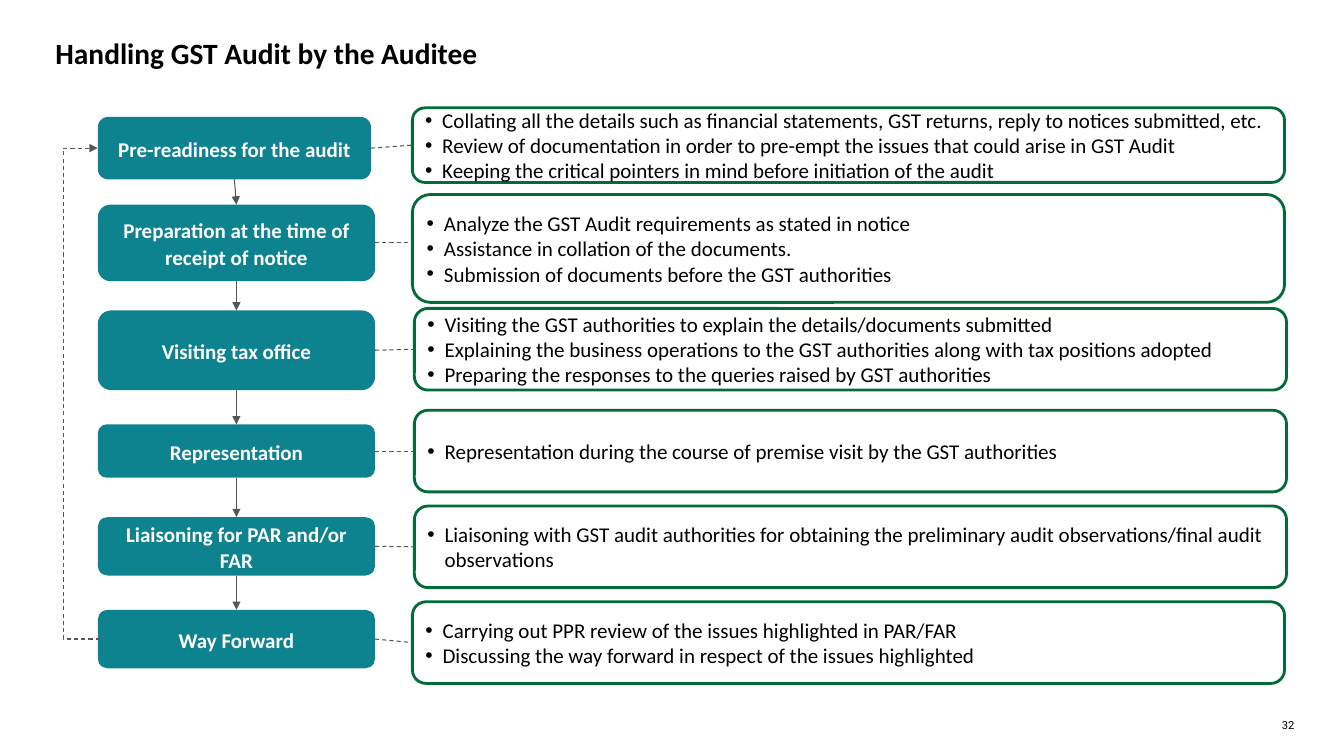
"""Build the slide on handling a GST audit as a six-stage flow."""
from dataclasses import dataclass
from itertools import pairwise

from lxml.etree import SubElement
from pptx import Presentation
from pptx.dml.color import RGBColor
from pptx.enum.dml import MSO_LINE
from pptx.enum.shapes import MSO_CONNECTOR, MSO_SHAPE
from pptx.enum.text import MSO_ANCHOR, MSO_AUTO_SIZE, PP_ALIGN
from pptx.oxml.ns import qn
from pptx.shapes.autoshape import Shape
from pptx.shapes.connector import Connector
from pptx.slide import Slide
from pptx.text.text import TextFrame, _Paragraph
from pptx.util import Inches, Pt

TEAL, GREEN, GREY = "0D8390", "046A38", "53565A"
BLACK, WHITE = "000000", "FFFFFF"
STAGE_LEFT, PANEL_WIDTH = 0.97, 8.65
TOP, LEFT, BOTTOM, RIGHT = range(4)


@dataclass
class Stage:
    """One step of the audit with its panel of details."""

    name: str
    top: float
    height: float
    panel_left: float
    panel_top: float
    panel_height: float
    details: list[str]
    width: float = 2.75

    @property
    def middle(self) -> float:
        """Return the vertical centre of the stage box."""
        return self.top + self.height / 2

    @property
    def panel_middle(self) -> float:
        """Return the vertical centre of the panel."""
        return self.panel_top + self.panel_height / 2


STAGES = [
    Stage("Pre-readiness for the audit", 1.16, 0.62, 4.09, 1.07, 0.74, [
        "Collating all the details such as financial statements, GST returns, "
        "reply to notices submitted, etc.",
        "Review of documentation in order to pre-empt the issues that could arise in GST Audit",
        "Keeping the critical pointers in mind before initiation of the audit",
    ], width=2.71),
    Stage("Preparation at the time of receipt of notice", 2.03, 0.76, 4.09, 1.93, 1.07, [
        "Analyze the GST Audit requirements as stated in notice",
        "Assistance in collation of the documents.",
        "Submission of documents before the GST authorities",
    ]),
    Stage("Visiting tax office", 3.08, 0.79, 4.11, 3.06, 0.81, [
        "Visiting the GST authorities to explain the details/documents submitted",
        "Explaining the business operations to the GST authorities along with "
        "tax positions adopted",
        "Preparing the responses to the queries raised by GST authorities",
    ]),
    Stage("Representation", 4.21, 0.53, 4.11, 4.07, 0.81, [
        "Representation during the course of premise visit by the GST authorities",
    ]),
    Stage("Liaisoning for PAR and/or FAR", 5.13, 0.58, 4.11, 5.02, 0.81, [
        "Liaisoning with GST audit authorities for obtaining the preliminary audit "
        "observations/final audit observations",
    ]),
    Stage("Way Forward", 6.05, 0.58, 4.09, 5.97, 0.81, [
        "Carrying out PPR review of the issues highlighted in PAR/FAR",
        "Discussing the way forward in respect of the issues highlighted",
    ]),
]


def color(value: str) -> RGBColor:
    """Turn a hex string into a colour."""
    return RGBColor.from_string(value)


def format_text(paragraph: _Paragraph, size: float, value: str, bold: bool = False,
                name: str = "Calibri") -> None:
    """Set the font of every run in a paragraph."""
    for run in paragraph.runs:
        run.font.name = name
        run.font.size = Pt(size)
        run.font.bold = bold
        run.font.color.rgb = color(value)


def set_margins(text_frame: TextFrame, margin: float) -> None:
    """Give a text frame equal margins on all sides."""
    text_frame.margin_left = text_frame.margin_right = Inches(margin)
    text_frame.margin_top = text_frame.margin_bottom = Inches(margin)


def add_box(slide: Slide, left: float, top: float, width: float, height: float,
            fill: str) -> Shape:
    """Add a rounded rectangle without a line or shadow."""
    shape = slide.shapes.add_shape(MSO_SHAPE.ROUNDED_RECTANGLE, Inches(left), Inches(top),
                                   Inches(width), Inches(height))
    shape.shadow.inherit = False
    shape.fill.solid()
    shape.fill.fore_color.rgb = color(fill)
    shape.line.fill.background()
    shape.text_frame.word_wrap = True
    shape.text_frame.vertical_anchor = MSO_ANCHOR.MIDDLE
    set_margins(shape.text_frame, 0.09)
    return shape


def add_stage(slide: Slide, stage: Stage) -> Shape:
    """Add the filled box that names a stage."""
    shape = add_box(slide, STAGE_LEFT, stage.top, stage.width, stage.height, TEAL)
    shape.text_frame.text = stage.name
    paragraph = shape.text_frame.paragraphs[0]
    paragraph.alignment = PP_ALIGN.CENTER
    paragraph.line_spacing = 1.06
    format_text(paragraph, 15, WHITE, bold=True)
    return shape


def add_panel(slide: Slide, stage: Stage) -> Shape:
    """Add the outlined panel with the bulleted details of a stage."""
    shape = add_box(slide, stage.panel_left, stage.panel_top, PANEL_WIDTH,
                    stage.panel_height, WHITE)
    shape.line.color.rgb = color(GREEN)
    shape.line.width = Pt(2)
    shape.text_frame.text = "\n".join(stage.details)
    for paragraph in shape.text_frame.paragraphs:
        paragraph.alignment = PP_ALIGN.LEFT
        properties = paragraph._p.get_or_add_pPr()
        properties.set("marL", str(Inches(0.17)))
        properties.set("indent", str(-Inches(0.17)))
        SubElement(properties, qn("a:buFont"), typeface="Arial")
        SubElement(properties, qn("a:buChar"), char="•")
        format_text(paragraph, 15, BLACK)
    return shape


def add_link(slide: Slide, start: tuple[float, float], end: tuple[float, float],
             dashed: bool = False, arrow: bool = False,
             kind: MSO_CONNECTOR = MSO_CONNECTOR.STRAIGHT) -> Connector:
    """Add a thin grey connector, dashed or with an arrowhead if asked."""
    link = slide.shapes.add_connector(kind, *map(Inches, start + end))
    link.line.color.rgb = color(GREY)
    link.line.width = Pt(0.75)
    if dashed:
        link.line.dash_style = MSO_LINE.DASH
    if arrow:
        SubElement(link.line._get_or_add_ln(), qn("a:tailEnd"), type="triangle")
    SubElement(link._element.spPr, qn("a:effectLst"))
    return link


def main() -> None:
    """Create the presentation and save it."""
    presentation = Presentation()
    presentation.slide_width, presentation.slide_height = Inches(13.33), Inches(7.5)
    slide = presentation.slides.add_slide(presentation.slide_layouts[5])

    title = slide.shapes.title
    title.left, title.top, title.width, title.height = map(Inches, (0.55, 0.35, 12.21, 0.37))
    title.text_frame.text = "Handling GST Audit by the Auditee"
    title.text_frame.auto_size = MSO_AUTO_SIZE.NONE
    title.text_frame.vertical_anchor = MSO_ANCHOR.TOP
    set_margins(title.text_frame, 0)
    title.text_frame.paragraphs[0].alignment = PP_ALIGN.LEFT
    format_text(title.text_frame.paragraphs[0], 21, BLACK, bold=True)

    boxes = [add_stage(slide, stage) for stage in STAGES]
    panels = [add_panel(slide, stage) for stage in STAGES]

    for upper, lower in pairwise(boxes):
        arrow = add_link(slide, (0, 0), (0, 0), arrow=True)
        arrow.begin_connect(upper, BOTTOM)
        arrow.end_connect(lower, TOP)

    first, last = STAGES[0], STAGES[-1]
    loop = add_link(slide, (STAGE_LEFT + 0.02, last.middle), (STAGE_LEFT, first.middle),
                    dashed=True, arrow=True, kind=MSO_CONNECTOR.ELBOW)
    guides = loop._element.spPr.find(qn("a:prstGeom")).get_or_add_avLst()
    SubElement(guides, qn("a:gd"), name="adj1", fmla="val 1800000")

    for stage, box, panel in zip(STAGES, boxes, panels):
        link = add_link(slide, (STAGE_LEFT + stage.width, stage.middle),
                        (stage.panel_left, stage.middle), dashed=True)
        link.begin_connect(box, RIGHT)
        if abs(stage.middle - stage.panel_middle) < 0.05:
            link.end_connect(panel, LEFT)

    number = slide.shapes.add_textbox(*map(Inches, (12.5, 7.13, 0.34, 0.13)))
    number.text_frame.word_wrap = True
    set_margins(number.text_frame, 0)
    number.text_frame.text = "32"
    number.text_frame.paragraphs[0].alignment = PP_ALIGN.RIGHT
    format_text(number.text_frame.paragraphs[0], 8, BLACK, name="Roboto")

    presentation.save("out.pptx")


if __name__ == "__main__":
    main()
